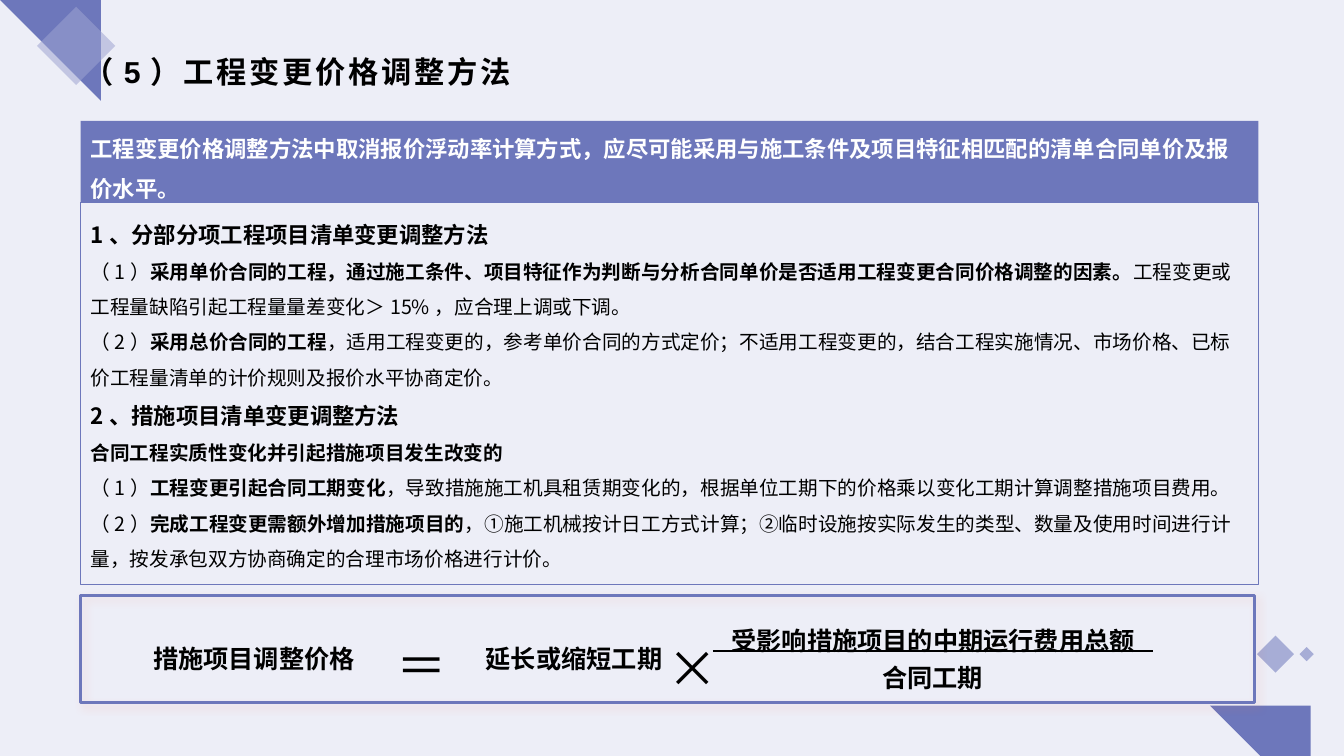
from dataclasses import dataclass
from typing import Any, Optional

from lxml.etree import SubElement as Sub
from pptx import Presentation
from pptx.dml.color import RGBColor as Rgb
from pptx.enum.shapes import MSO_CONNECTOR as Link, MSO_SHAPE as Kind
from pptx.enum.text import MSO_ANCHOR as Anchor, PP_ALIGN as Align
from pptx.oxml.ns import qn
from pptx.util import Inches, Pt


@dataclass(frozen=True)
class Theme:
    back: str = "EDEEF7"
    main: str = "6D77BB"
    pale: str = "9EA4D2"
    glow: str = "EF694C"
    ink: str = "000000"
    white: str = "FFFFFF"
    latin: str = "Arial"
    han: str = "Noto Sans CJK SC"
    title: float = 21.6
    head: float = 16
    body: float = 14
    term: float = 18
    sign: float = 36


T = Theme()


@dataclass(frozen=True)
class Box:
    x: float
    y: float
    w: float
    h: float

    def lens(self) -> list[int]:
        return [Inches(v) for v in (self.x, self.y, self.w, self.h)]


@dataclass(frozen=True)
class Run:
    text: str
    bold: bool = False
    size: float = T.body
    tint: str = T.ink
    font: str = T.han
    gap: int = 0


@dataclass(frozen=True)
class Gem:
    box: Box
    tint: str


@dataclass(frozen=True)
class Term:
    box: Box
    run: Run
    align: Align = Align.LEFT


Para = list[Run]


def put(obj: Any, form: dict[str, Any]) -> None:
    for key, val in form.items():
        setattr(obj, key, val)


def paint(shape: Any, fill: Optional[str], line: Optional[str] = None,
          width: float = 1) -> None:
    shape.shadow.inherit = False
    for part, tint in ((shape.fill, fill), (shape.line.fill, line)):
        if tint:
            part.solid()
            part.fore_color.rgb = Rgb.from_string(tint)
        else:
            part.background()
    if line:
        shape.line.width = Pt(width)


def write(shape: Any, paras: list[Para], space: float = 1,
          align: Align = Align.LEFT, anchor: Anchor = Anchor.TOP) -> None:
    frame = shape.text_frame
    put(frame, {"word_wrap": True, "vertical_anchor": anchor})
    for i, runs in enumerate(paras):
        para = frame.add_paragraph() if i else frame.paragraphs[0]
        put(para, {"alignment": align, "line_spacing": space})
        for item in runs:
            run = para.add_run()
            run.text = item.text
            put(run.font, {"name": item.font, "size": Pt(item.size),
                           "bold": item.bold})
            run.font.color.rgb = Rgb.from_string(item.tint)
            props = run.font._element
            Sub(props, qn("a:ea")).set("typeface", T.han)
            if item.gap:
                props.set("spc", str(item.gap))


def panel(slide: Any, box: Box, fill: Optional[str],
          line: Optional[str] = None, width: float = 1) -> Any:
    shape = slide.shapes.add_shape(Kind.RECTANGLE, *box.lens())
    paint(shape, fill, line, width)
    return shape


def label(slide: Any, term: Term) -> None:
    shape = slide.shapes.add_textbox(*term.box.lens())
    write(shape, [[term.run]], align=term.align)


def facet(slide: Any, spots: list[tuple[float, float]]) -> None:
    pen = slide.shapes.build_freeform(*spots[0], scale=Inches(1))
    pen.add_line_segments(spots[1:], close=True)
    paint(pen.convert_to_shape(), T.main)


def gem(slide: Any, item: Gem) -> None:
    shape = panel(slide, item.box, item.tint)
    shape.rotation = 45
    tint = shape.fill._xPr.find(qn("a:solidFill"))[0]
    Sub(tint, qn("a:alpha")).set("val", "54000")


def shade(shape: Any) -> None:
    fx = shape._element.spPr.find(qn("a:effectLst"))
    drop = Sub(fx, qn("a:outerShdw"), blurRad=str(Pt(6)), dist=str(Pt(3)),
               dir=str(45 * 60000), algn="tl", rotWithShape="0")
    tint = Sub(drop, qn("a:srgbClr"), val=T.glow)
    Sub(tint, qn("a:alpha"), val="16000")


def head(text: str) -> Para:
    return [Run(text, True, T.head)]


def point(mark: str, lead: str, rest: str) -> Para:
    return [Run(mark), Run(lead, True), Run(rest)]


def term(x: float, y: float, w: float, text: str,
         align: Align = Align.LEFT) -> Term:
    return Term(Box(x, y, w, 0.4), Run(text, True, T.term), align)


def sign(box: Box, text: str) -> Term:
    return Term(box, Run(text, size=T.sign))


FACETS = [
    [(12.75, 6.61), (13.27, 7.13), (12.9, 7.5), (12.59, 7.5), (12.22, 7.13)],
    [(0.01, 0), (1.21, 0), (0.57, 0.63), (0.01, 0.07)],
]
GEMS = [
    Gem(Box(12.52, 6.36, 0.26, 0.26), T.main),
    Gem(Box(12.91, 6.44, 0.1, 0.1), T.main),
    Gem(Box(0.48, 0.18, 0.55, 0.55), T.pale),
]
TITLE = Term(Box(0.73, 0.48, 11.87, 0.48),
             Run("（5）工程变更价格调整方法", True, T.title, font=T.latin, gap=200))
LEAD = "工程变更价格调整方法中取消报价浮动率计算方式，应尽可能采用与施工条件及项目特征相匹配的清单合同单价及报价水平。"
BODY = [
    head("1、分部分项工程项目清单变更调整方法"),
    point("（1）", "采用单价合同的工程，通过施工条件、项目特征作为判断与分析合同单价是否适用工程变更合同价格调整的因素。",
          "工程变更或工程量缺陷引起工程量量差变化＞15%，应合理上调或下调。"),
    point("（2）", "采用总价合同的工程",
          "，适用工程变更的，参考单价合同的方式定价；不适用工程变更的，结合工程实施情况、市场价格、已标价工程量清单的计价规则及报价水平协商定价。"),
    head("2、措施项目清单变更调整方法"),
    [Run("合同工程实质性变化并引起措施项目发生改变的", True)],
    point("（1）", "工程变更引起合同工期变化",
          "，导致措施施工机具租赁期变化的，根据单位工期下的价格乘以变化工期计算调整措施项目费用。"),
    point("（2）", "完成工程变更需额外增加措施项目的",
          "，①施工机械按计日工方式计算；②临时设施按实际发生的类型、数量及使用时间进行计量，按发承包双方协商确定的合理市场价格进行计价。"),
]
TERMS = [
    term(1.42, 6.33, 2.22, "措施项目调整价格"),
    sign(Box(3.83, 6.24, 0.71, 0.71), "＝"),
    term(4.72, 6.33, 1.97, "延长或缩短工期"),
    sign(Box(6.52, 6.27, 0.58, 0.8), "×"),
    term(7.11, 6.15, 4.29, "受影响措施项目的中期运行费用总额", Align.CENTER),
    term(8.65, 6.52, 1.21, "合同工期"),
]


def main() -> None:
    deck = Presentation()
    put(deck, {"slide_width": Inches(13.33), "slide_height": Inches(7.5)})
    slide = deck.slides.add_slide(deck.slide_layouts[6])
    slide.background.fill.solid()
    slide.background.fill.fore_color.rgb = Rgb.from_string(T.back)

    # Corner gems
    for spots in FACETS:
        facet(slide, spots)
    for item in GEMS:
        gem(slide, item)

    # Title, body and lead band
    label(slide, TITLE)
    write(panel(slide, Box(0.8, 2.01, 11.68, 3.79), None, T.main, 0.75),
          BODY, 1.5)
    write(panel(slide, Box(0.8, 1.2, 11.68, 0.81), T.main),
          [[Run(LEAD, True, T.head, T.white)]], 1.5, anchor=Anchor.MIDDLE)

    # Price formula
    shade(panel(slide, Box(0.8, 5.91, 11.64, 1.06), None, T.main, 2))
    for item in TERMS:
        label(slide, item)
    bar = slide.shapes.add_connector(
        Link.STRAIGHT, *[Inches(v) for v in (7.07, 6.46, 11.44, 6.46)])
    bar.line.color.rgb = Rgb.from_string(T.ink)
    bar.line.width = Pt(1.75)
    Sub(bar._element.spPr, qn("a:effectLst"))

    deck.save("out.pptx")


if __name__ == "__main__":
    main()
